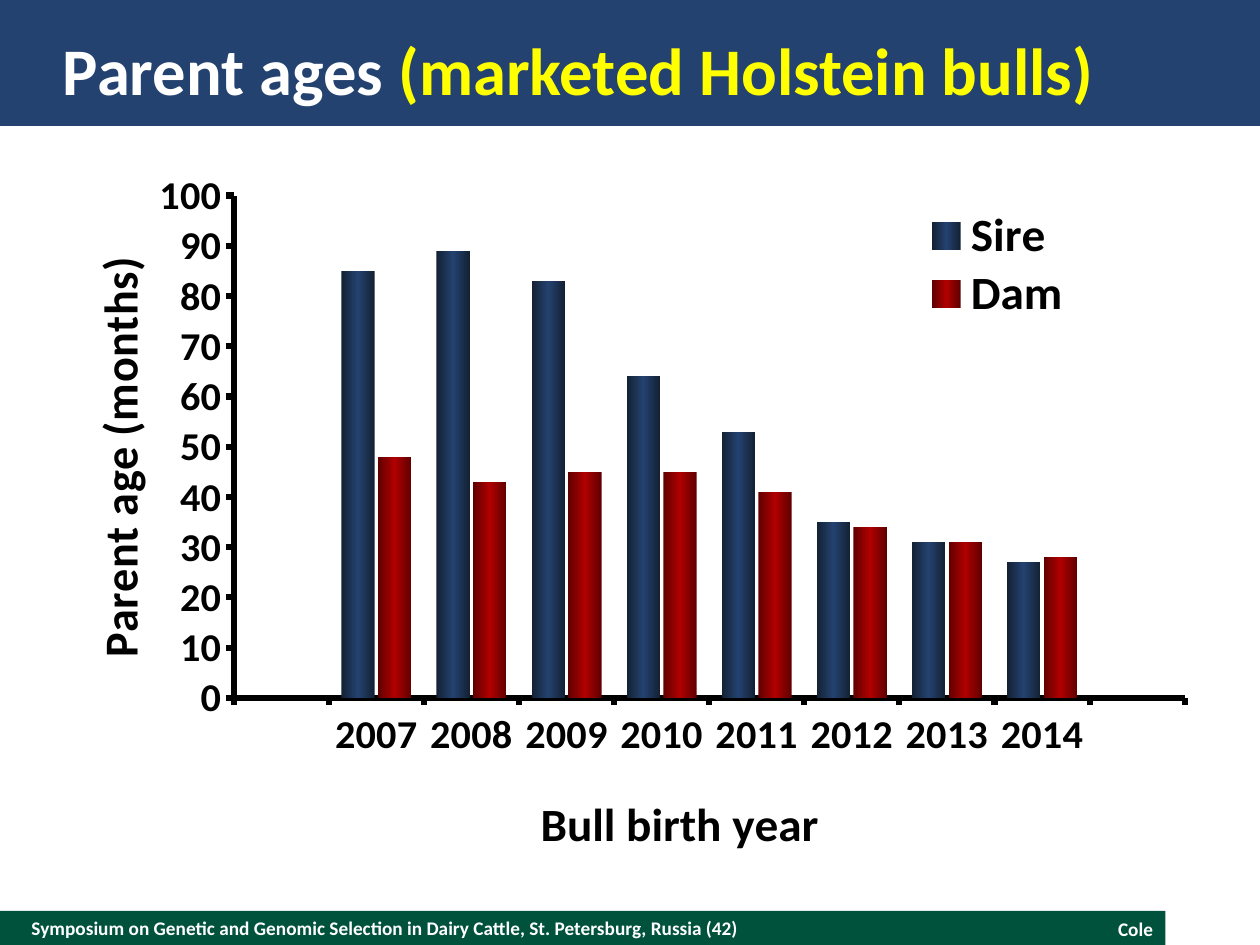
from copy import deepcopy

from pptx import Presentation
from pptx import util as u
from pptx.chart.data import CategoryChartData
from pptx.dml.color import RGBColor
from pptx.enum import chart as ch, shapes, text
from pptx.oxml import parse_xml
from pptx.oxml.ns import nsdecls, qn

NAVY = RGBColor(0x24, 0x42, 0x70)
DARK_NAVY = RGBColor(0x13, 0x21, 0x33)
RED = RGBColor(0xB0, 0x00, 0x00)
DARK_RED = RGBColor(0x60, 0x00, 0x00)
GREEN = RGBColor(0x00, 0x52, 0x3C)
WHITE = RGBColor(0xFF, 0xFF, 0xFF)
YELLOW = RGBColor(0xFF, 0xFF, 0x00)
BLACK = RGBColor(0, 0, 0)
FONT = "Calibri"

BANDS = [((0, 7.23, 9.25, 0.27), GREEN), ((0, 0, 10, 1), NAVY)]
LEFT, RIGHT = text.PP_ALIGN.LEFT, text.PP_ALIGN.RIGHT
# box, side inset, size, alignment, runs
TEXTS = [
    ((0.25, 7.23, 6.5, 0.27), 0, 11, LEFT,
     [("Symposium on Genetic and Genomic Selection in Dairy Cattle, "
       "St. Petersburg, Russia (42)", WHITE)]),
    ((7.25, 7.23, 2, 0.29), 0.1, 11, RIGHT, [("Cole", WHITE)]),
    ((0.5, 0.2, 9, 0.7), 0, 38, LEFT,
     [("Parent ages ", WHITE), ("(marketed Holstein bulls)", YELLOW)]),
]

CHART = (0.34, 0.87, 9.47, 6.02)
YEARS = ["", *map(str, range(2007, 2015)), ""]
SERIES = [
    ("Sire", [85, 89, 83, 64, 53, 35, 31, 27], (DARK_NAVY, NAVY, DARK_NAVY)),
    ("Dam", [48, 43, 45, 45, 41, 34, 31, 28], (DARK_RED, RED, DARK_RED)),
]
PLOT = dict(x=0.16, y=0.116, w=0.797, h=0.678)
LEGEND = dict(x=0.73, y=0.13, w=0.14, h=0.16)


def inches(box):
    return [u.Inches(n) for n in box]


def style(font, size, color=BLACK):
    values = dict(name=FONT, size=u.Pt(size), bold=True)
    for key, value in values.items():
        setattr(font, key, value)
    font.color.rgb = color


def place(node, index, spots, inner=False):
    """Give a chart part a fixed place, as fractions of the chart."""
    for old in node.findall(qn("c:layout")):
        node.remove(old)
    marks = '<c:layoutTarget val="inner"/>' if inner else ""
    marks += "".join(f'<c:{k}Mode val="edge"/>' for k in "xy")
    marks += "".join(f'<c:{k} val="{v}"/>' for k, v in spots.items())
    node.insert(index, parse_xml(
        f'<c:layout {nsdecls("c")}><c:manualLayout>{marks}'
        '</c:manualLayout></c:layout>'))


def shade(bars, colors):
    fill = bars.format.fill
    fill.gradient()
    fill.gradient_angle = 0
    stops = bars._element.find(".//" + qn("a:gsLst"))
    stops.insert(1, deepcopy(stops[0]))
    for stop, color, spot in zip(fill.gradient_stops, colors, (0, 0.5, 1)):
        stop.color.rgb = color
        stop.position = spot


def add_band(slide, box, color):
    band = slide.shapes.add_shape(shapes.MSO_SHAPE.RECTANGLE, *inches(box))
    band.shadow.inherit = False
    band.fill.solid()
    band.fill.fore_color.rgb = color
    band.line.fill.background()


def add_text(slide, box, inset, size, align, runs):
    frame = slide.shapes.add_textbox(*inches(box)).text_frame
    side, edge = u.Inches(inset), u.Inches(inset / 2)
    form = dict(word_wrap=True, vertical_anchor=text.MSO_ANCHOR.MIDDLE,
                margin_left=side, margin_right=side,
                margin_top=edge, margin_bottom=edge)
    for key, value in form.items():
        setattr(frame, key, value)
    line = frame.paragraphs[0]
    line.alignment = align
    for words, color in runs:
        run = line.add_run()
        run.text = words
        style(run.font, size, color)


def set_axis(axis, words, spots, turn):
    axis.has_major_gridlines = False
    axis.major_tick_mark = ch.XL_TICK_MARK.OUTSIDE
    axis.minor_tick_mark = ch.XL_TICK_MARK.NONE
    axis.format.line.color.rgb = BLACK
    axis.format.line.width = u.Pt(3.5)
    style(axis.tick_labels.font, 23)
    title = axis.axis_title
    title.text_frame.text = words
    style(title.text_frame.paragraphs[0].runs[0].font, 27)
    title._element.find(".//" + qn("a:bodyPr")).set("rot", str(turn * 60000))
    place(title._element, 1, spots)


def add_chart(slide):
    data = CategoryChartData()
    data.categories = YEARS
    for name, ages, _ in SERIES:
        data.add_series(name, [None, *ages, None])
    chart = slide.shapes.add_chart(
        ch.XL_CHART_TYPE.COLUMN_CLUSTERED, *inches(CHART), data).chart
    chart.has_title = False
    chart.font.name = FONT
    chart.font.size = u.Pt(18)
    chart.font.color.rgb = BLACK

    plot = chart.plots[0]
    plot.vary_by_categories = False
    plot.gap_width = 75
    plot.overlap = -10
    for bars, (_, _, colors) in zip(plot.series, SERIES):
        shade(bars, colors)

    set_axis(chart.category_axis, "Bull birth year", dict(x=0.41, y=0.91), 0)
    ages = chart.value_axis
    set_axis(ages, "Parent age (months)", dict(x=0.03, y=0.2), -90)
    ages.minimum_scale, ages.maximum_scale, ages.major_unit = 0, 100, 10

    chart.has_legend = True
    legend = chart.legend
    legend.position = ch.XL_LEGEND_POSITION.RIGHT
    legend.include_in_layout = False
    style(legend.font, 27)
    place(legend._element, 1, LEGEND)
    place(chart._chartSpace.find(".//" + qn("c:plotArea")), 0, PLOT, True)


def main():
    deck = Presentation()
    deck.slide_width, deck.slide_height = inches((10, 7.5))
    slide = deck.slides.add_slide(deck.slide_layouts[6])
    for band in BANDS:
        add_band(slide, *band)
    for item in TEXTS:
        add_text(slide, *item)
    add_chart(slide)
    deck.save("out.pptx")


if __name__ == "__main__":
    main()
